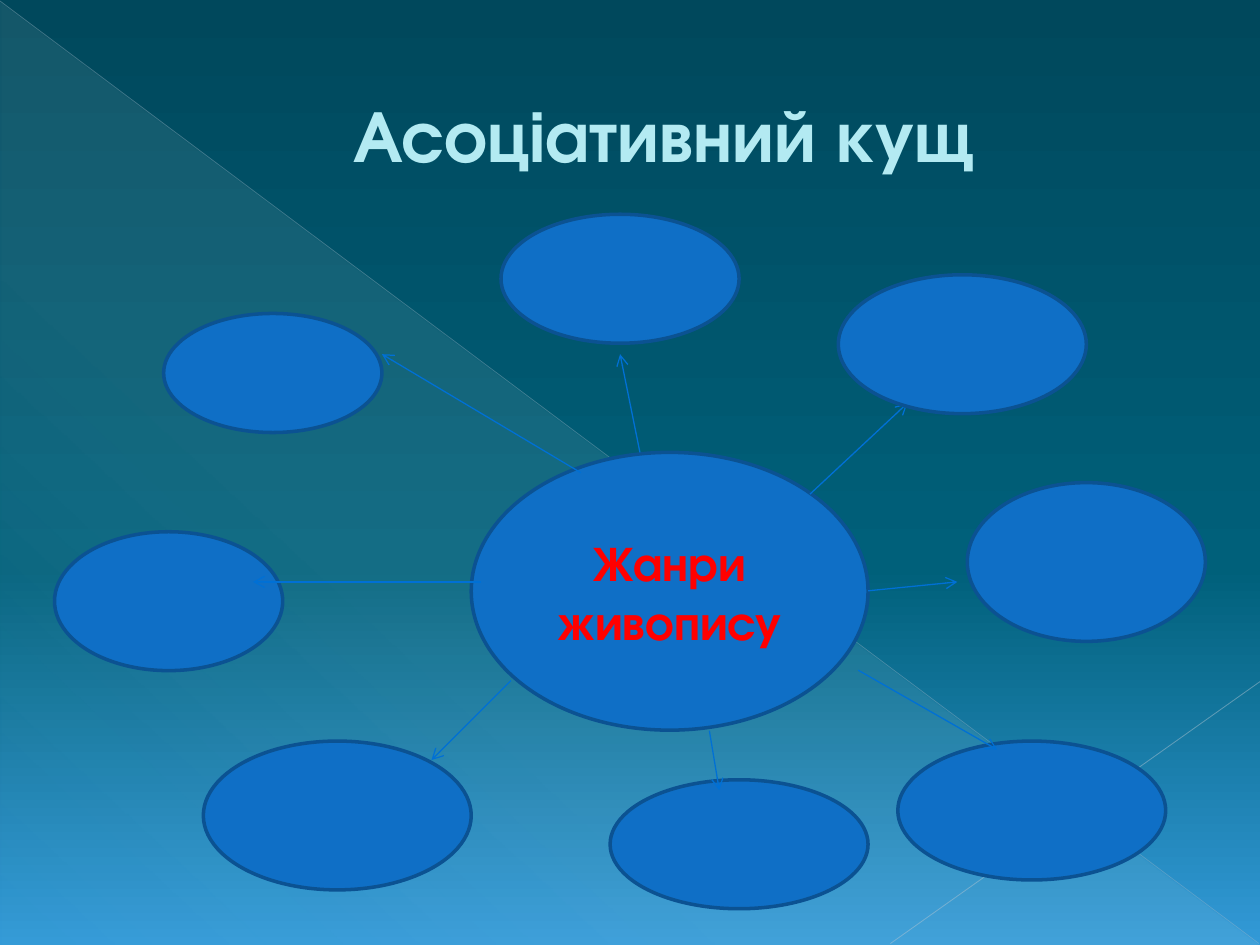
from typing import NamedTuple

from lxml import etree
from pptx import Presentation
from pptx.dml.color import RGBColor
from pptx.enum.shapes import MSO_CONNECTOR, MSO_SHAPE
from pptx.enum.text import MSO_ANCHOR, MSO_AUTO_SIZE, PP_ALIGN
from pptx.oxml.ns import qn
from pptx.util import Cm, Pt

ELLIPSE = MSO_SHAPE.OVAL
TRIANGLE = MSO_SHAPE.RIGHT_TRIANGLE
STRAIGHT = MSO_CONNECTOR.STRAIGHT
CENTER = PP_ALIGN.CENTER
MIDDLE = MSO_ANCHOR.MIDDLE
NO_AUTOFIT = MSO_AUTO_SIZE.NONE

FONT = "TeX Gyre Adventor"
ARROW_COLOR = "0070D5"


class Bubble(NamedTuple):
    left: float
    top: float
    width: float
    height: float


class Segment(NamedTuple):
    x1: float
    y1: float
    x2: float
    y2: float


class Stop(NamedTuple):
    position: int
    color: str
    opacity: int = 100


# All positions in centimetres
CENTRE = Bubble(9.5, 9.12, 8, 5.6)
BRANCHES = [
    Bubble(3.3, 6.32, 4.4, 2.4),
    Bubble(10.1, 4.32, 4.8, 2.6),
    Bubble(16.9, 5.54, 5, 2.8),
    Bubble(1.1, 10.72, 4.6, 2.8),
    Bubble(4.1, 14.94, 5.4, 3),
    Bubble(12.3, 15.72, 5.2, 2.6),
    Bubble(18.1, 14.94, 5.4, 2.8),
    Bubble(19.5, 9.73, 4.8, 3.2),
]
ARROWS_BEHIND = [
    Segment(16.33, 9.96, 18.29, 8.13),
    Segment(11.71, 9.53, 7.7, 7.14),
]
ARROWS_IN_FRONT = [
    Segment(12.9, 9.12, 12.5, 7.14),
    Segment(17.5, 11.91, 19.3, 11.73),
    Segment(14.3, 14.73, 14.5, 15.93),
    Segment(17.3, 13.51, 20.1, 15.11),
    Segment(9.7, 11.73, 5.1, 11.73),
    Segment(10.3, 13.72, 8.7, 15.32),
]


def rgb(color: str) -> RGBColor:
    return RGBColor.from_string(color)


def add_color(parent, color: str, opacity: int = 100) -> None:
    node = etree.SubElement(parent, qn("a:srgbClr"), val=color)
    if opacity < 100:
        etree.SubElement(node, qn("a:alpha"), val=str(opacity * 1000))


def set_gradient(fill, owner, stops: list[Stop], angle: int) -> None:
    """Give the fill its stops; the angle runs clockwise in degrees."""
    fill.gradient()
    gradient = owner.find(".//" + qn("a:gradFill"))
    for child in list(gradient):
        gradient.remove(child)
    stop_list = etree.SubElement(gradient, qn("a:gsLst"))
    for stop in stops:
        node = etree.SubElement(stop_list, qn("a:gs"), pos=str(stop.position * 1000))
        add_color(node, stop.color, stop.opacity)
    etree.SubElement(gradient, qn("a:lin"), ang=str(angle * 60000), scaled="0")


def write_text(frame, text: str, size: int, color: str):
    frame.text = text
    frame.word_wrap = True
    frame.vertical_anchor = MIDDLE
    para = frame.paragraphs[0]
    para.alignment = CENTER
    span = para.runs[0]
    span.font.name = FONT
    span.font.size = Pt(size)
    span.font.bold = True
    span.font.color.rgb = rgb(color)
    return para


def add_line(page, segment: Segment, color: str, width: float, opacity: int = 100):
    line = page.shapes.add_connector(STRAIGHT, *map(Cm, segment))
    line.line.width = Pt(width)
    line.line.color.rgb = rgb(color)
    if opacity < 100:
        node = line.element.spPr.find(".//" + qn("a:srgbClr"))
        etree.SubElement(node, qn("a:alpha"), val=str(opacity * 1000))
    etree.SubElement(line.element.spPr, qn("a:effectLst"))
    return line


def add_arrow(page, segment: Segment) -> None:
    arrow = add_line(page, segment, ARROW_COLOR, 0.75)
    outline = arrow.element.spPr.find(qn("a:ln"))
    etree.SubElement(outline, qn("a:tailEnd"), type="arrow")


def add_bubble(page, bubble: Bubble):
    shape = page.shapes.add_shape(ELLIPSE, *map(Cm, bubble))
    shape.shadow.inherit = False
    shape.fill.solid()
    shape.fill.fore_color.rgb = rgb("0F6FC6")
    shape.line.color.rgb = rgb("0B5292")
    shape.line.width = Pt(2)
    return shape


def add_backdrop(page) -> None:
    sky = [Stop(0, "00485C"), Stop(60, "00607A"), Stop(100, "3299D7")]
    set_gradient(page.background.fill, page.element, sky, 90)

    triangle = page.shapes.add_shape(TRIANGLE, Cm(0.02), Cm(0.04), Cm(25.36), Cm(19))
    triangle.shadow.inherit = False
    triangle.line.fill.background()
    haze = [Stop(0, "DBF5F9", 10), Stop(70, "DBF5F9", 8), Stop(100, "DBF5F9", 1)]
    set_gradient(triangle.fill, triangle.element, haze, 133)

    add_line(page, Segment(0, 0.02, 25.38, 19.02), "ACC0CE", 0.39, 35)
    add_line(page, Segment(25.4, 13.74, 17.95, 19.02), "B5C7D3", 0.47, 45)


def add_title(page) -> None:
    title = page.shapes.title
    title.left, title.top = Cm(1.27), Cm(0.74)
    title.width, title.height = Cm(22.86), Cm(3.89)
    para = write_text(title.text_frame, "Асоціативний кущ", 42, "B3EAF2")
    title.text_frame.auto_size = NO_AUTOFIT
    properties = para._p.get_or_add_pPr()
    properties.set("marL", str(Cm(1.35)))
    properties.set("indent", "0")

    # Thin outline around the letters
    outline = etree.Element(qn("a:ln"), w=str(Pt(0.5)))
    add_color(etree.SubElement(outline, qn("a:solidFill")), "0A4D89")
    para.runs[0].font._element.insert(0, outline)


def main() -> None:
    deck = Presentation()
    deck.slide_width, deck.slide_height = Cm(25.4), Cm(19.05)
    page = deck.slides.add_slide(deck.slide_layouts[5])

    add_backdrop(page)
    add_title(page)

    # Central topic with its branches
    centre = add_bubble(page, CENTRE)
    write_text(centre.text_frame, "Жанри живопису", 28, "FF0000")
    for segment in ARROWS_BEHIND:
        add_arrow(page, segment)
    for bubble in BRANCHES:
        add_bubble(page, bubble)
    for segment in ARROWS_IN_FRONT:
        add_arrow(page, segment)

    deck.save("out.pptx")


if __name__ == "__main__":
    main()
